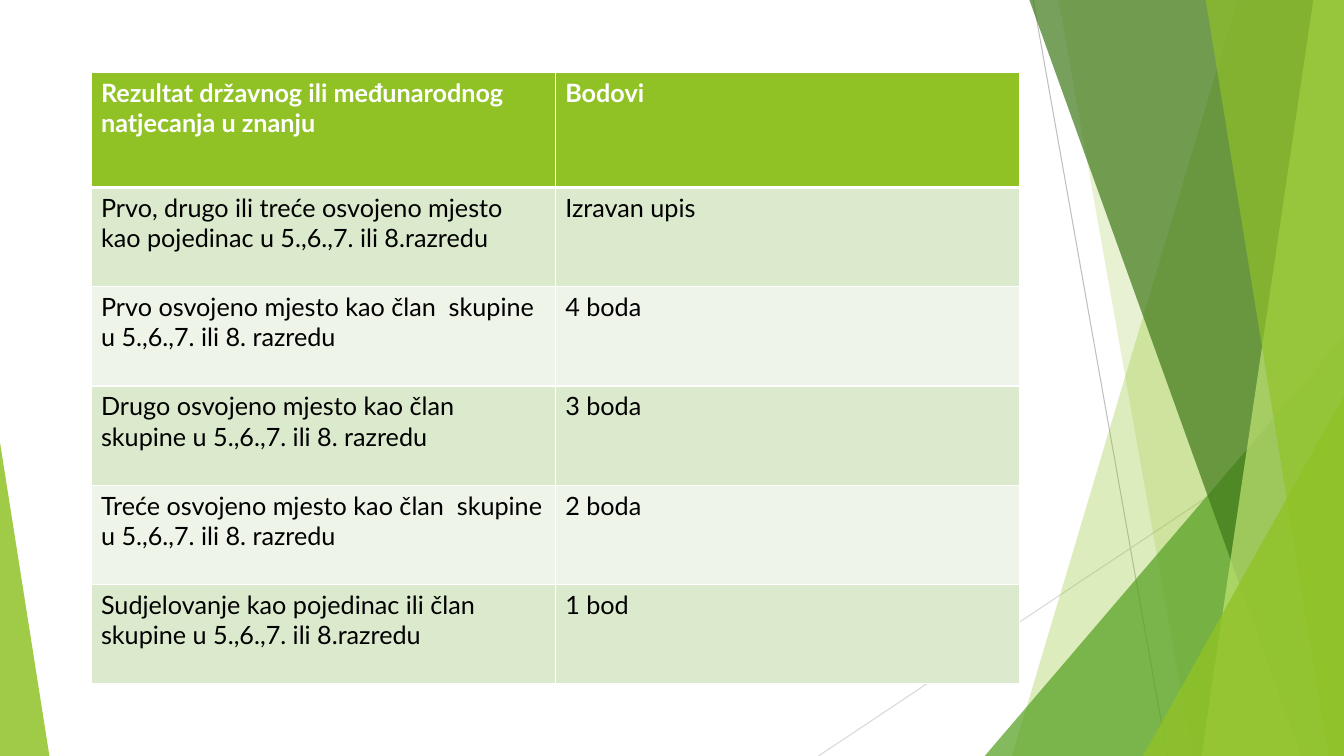
from dataclasses import dataclass

from lxml.etree import SubElement
from pptx import Presentation
from pptx.dml.color import RGBColor
from pptx.enum.shapes import MSO_CONNECTOR, MSO_SHAPE
from pptx.oxml.ns import qn
from pptx.util import Pt

WIDTH, HEIGHT = 960, 540
BAND_TOP = -0.6
FONT = "Lato"
COLORS = {
    "lime": "90C226",
    "green": "54A021",
    "dark_green": "3F7819",
    "pale_lime": "C0E474",
    "gray": "BFBFBF",
    "light_gray": "D9D9D9",
    "row_dark": "DBE9CD",
    "row_light": "EEF4E8",
    "white": "FFFFFF",
    "black": "000000",
}


@dataclass
class Ray:
    start: tuple[float, float]
    end: tuple[float, float]
    color: str


@dataclass
class Band:
    """Four-sided band that reaches the right edge of the slide."""
    top_x: float
    bottom_x: float
    color: str
    opacity: int


@dataclass
class Corner:
    """Right triangle standing on the bottom edge of the slide."""
    left: float
    top: float
    width: float
    apex: float
    color: str
    opacity: int


RAYS = [
    Ray((738, 0), (833.8, HEIGHT), "gray"),
    Ray((WIDTH, 290), (584.6, HEIGHT), "light_gray"),
]
FACETS = [
    Band(884.2, 722.9, "lime", 30),
    Band(756, 851.8, "lime", 20),
    Corner(703.4, 240, 256.6, 1, "green", 72),
    Band(735.1, 929.5, "dark_green", 70),
    Band(938.2, 858.2, "pale_lime", 70),
    Band(861.1, 949, "lime", 65),
    Corner(816.5, 283, 143.5, 1, "lime", 80),
    Corner(0, 316, 35.3, 0, "lime", 85),
]
TABLE_ROWS = [
    ("Rezultat državnog ili međunarodnog natjecanja u znanju", "Bodovi"),
    ("Prvo, drugo ili treće osvojeno mjesto kao pojedinac u 5.,6.,7. ili 8.razredu", "Izravan upis"),
    ("Prvo osvojeno mjesto kao član  skupine u 5.,6.,7. ili 8. razredu", "4 boda"),
    ("Drugo osvojeno mjesto kao član  skupine u 5.,6.,7. ili 8. razredu", "3 boda"),
    ("Treće osvojeno mjesto kao član  skupine u 5.,6.,7. ili 8. razredu", "2 boda"),
    ("Sudjelovanje kao pojedinac ili član skupine u 5.,6.,7. ili 8.razredu", "1 bod"),
]
TABLE_LEFT, TABLE_TOP = 65, 52
COLUMN_WIDTH, HEADER_HEIGHT, ROW_HEIGHT = 331.6, 82, 70.9


def rgb(name: str) -> RGBColor:
    return RGBColor.from_string(COLORS[name])


def draw_ray(slide, ray: Ray) -> None:
    points = [Pt(value) for value in (*ray.start, *ray.end)]
    connector = slide.shapes.add_connector(MSO_CONNECTOR.STRAIGHT, *points)
    connector.line.color.rgb = rgb(ray.color)
    connector.line.width = Pt(0.75)
    SubElement(connector.element.spPr, qn("a:effectLst"))


def draw_facet(slide, facet: Band | Corner) -> None:
    if isinstance(facet, Band):
        builder = slide.shapes.build_freeform(Pt(facet.top_x), Pt(BAND_TOP))
        corners = [(WIDTH, BAND_TOP), (WIDTH, HEIGHT), (facet.bottom_x, HEIGHT)]
        builder.add_line_segments([(Pt(x), Pt(y)) for x, y in corners])
        shape = builder.convert_to_shape()
    else:
        shape = slide.shapes.add_shape(
            MSO_SHAPE.ISOSCELES_TRIANGLE, Pt(facet.left), Pt(facet.top),
            Pt(facet.width), Pt(HEIGHT - facet.top))
        shape.adjustments[0] = facet.apex
    shape.shadow.inherit = False
    shape.line.fill.background()
    shape.fill.solid()
    shape.fill.fore_color.rgb = rgb(facet.color)
    color = shape.element.spPr.find(f"{qn('a:solidFill')}/{qn('a:srgbClr')}")
    SubElement(color, qn("a:alpha"), val=str(facet.opacity * 1000))


def add_borders(cell, top: float, bottom: float) -> None:
    properties = cell._tc.get_or_add_tcPr()
    for side, width in (("L", 1), ("R", 1), ("T", top), ("B", bottom)):
        border = SubElement(properties, qn(f"a:ln{side}"), w=str(Pt(width)))
        fill = SubElement(border, qn("a:solidFill"))
        SubElement(fill, qn("a:srgbClr"), val=COLORS["white"])


def fill_cell(cell, text: str, row: int) -> None:
    is_header = row == 0
    add_borders(cell, top=3 if row == 1 else 1, bottom=3 if is_header else 1)
    cell.fill.solid()
    cell.fill.fore_color.rgb = rgb(
        "lime" if is_header else "row_dark" if row % 2 else "row_light")
    run = cell.text_frame.paragraphs[0].add_run()
    run.text = text
    run.font.name = FONT
    run.font.size = Pt(18)
    run.font.bold = is_header
    run.font.color.rgb = rgb("white" if is_header else "black")


def draw_table(slide) -> None:
    heights = [HEADER_HEIGHT] + [ROW_HEIGHT] * (len(TABLE_ROWS) - 1)
    table = slide.shapes.add_table(
        len(TABLE_ROWS), 2, Pt(TABLE_LEFT), Pt(TABLE_TOP),
        Pt(2 * COLUMN_WIDTH), Pt(sum(heights))).table
    for column in table.columns:
        column.width = Pt(COLUMN_WIDTH)
    for row, (texts, height) in enumerate(zip(TABLE_ROWS, heights)):
        table.rows[row].height = Pt(height)
        for column, text in enumerate(texts):
            fill_cell(table.cell(row, column), text, row)


def main() -> None:
    presentation = Presentation()
    presentation.slide_width = Pt(WIDTH)
    presentation.slide_height = Pt(HEIGHT)
    slide = presentation.slides.add_slide(presentation.slide_layouts[6])

    # Faceted background
    for ray in RAYS:
        draw_ray(slide, ray)
    for facet in FACETS:
        draw_facet(slide, facet)

    # Points table
    draw_table(slide)

    presentation.save("out.pptx")


if __name__ == "__main__":
    main()
